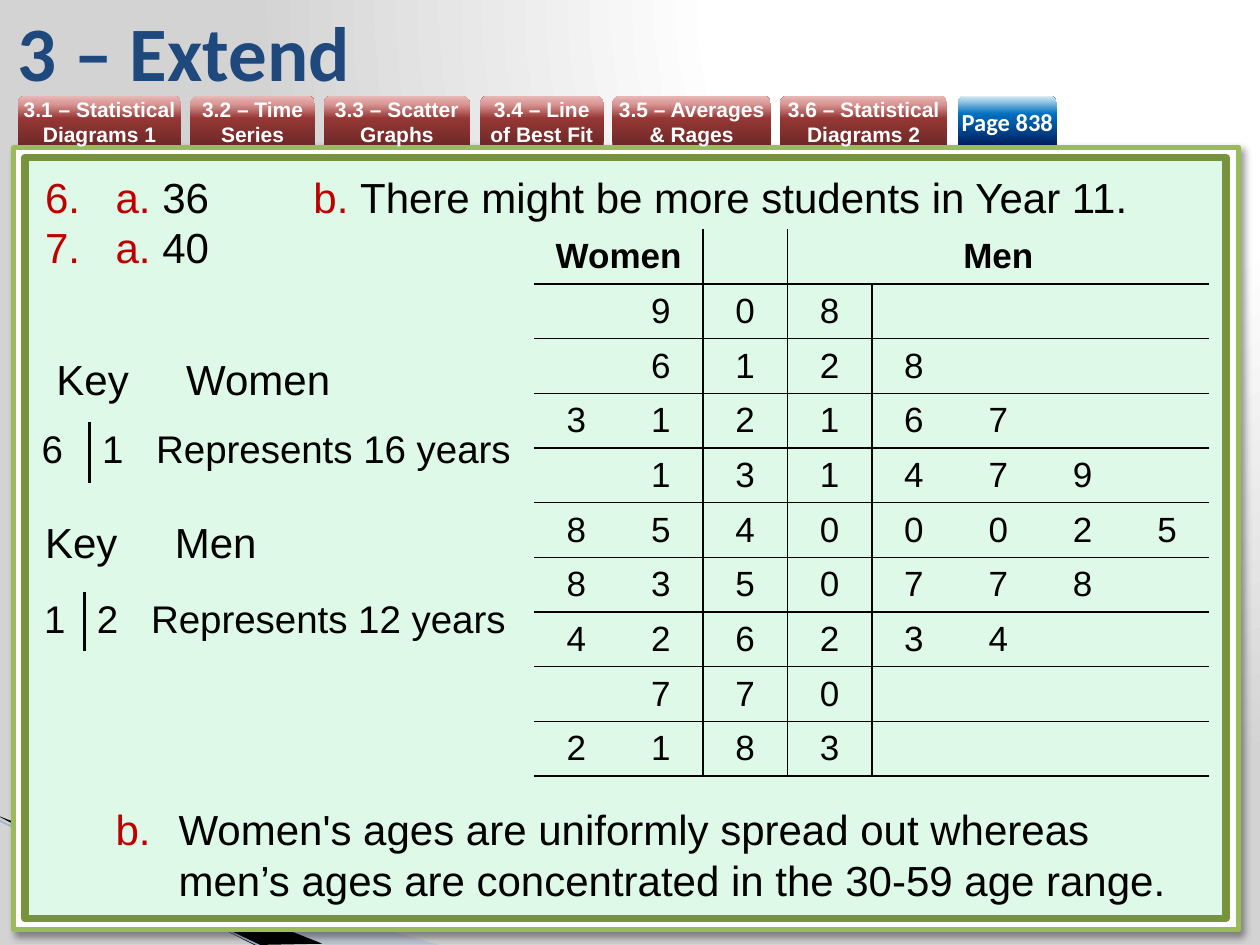
from lxml import etree
from pptx import Presentation
from pptx import util as u
from pptx.dml.color import RGBColor
from pptx.enum import shapes, text
from pptx.oxml import parse_xml
from pptx.oxml.ns import nsdecls, qn

INK = {
    "black": "000000", "white": "FFFFFF", "title": "1F497D", "red": "C00000",
    "mint": "DFF9E8", "olive": "77933C", "lime": "9BBB59",
    "haze": "A7B9DB", "steel": "9EB3D6", "grey": "D3D3D3",
}
WINE = [(0, "6F2927"), (54, "953735"), (83, "D99694"), (100, "E6B9B8")]
BLUE = [(0, "002060"), (63, "0070C0"), (100, "DBEEF4")]
UP = '<a:lin ang="16200000" scaled="0"/>'
GLOW = '<a:path path="circle"><a:fillToRect l="65000" t="0" r="0" b="98000"/></a:path>'
PLAIN = "{2D5ABB26-0587-4C30-8999-92F81FD0307C}"

TABS = [
    ("3.1 – Statistical Diagrams 1", 0.14, 1.3), ("3.2 – Time Series", 1.51, 0.99),
    ("3.3 – Scatter Graphs", 2.57, 1.16), ("3.4 – Line of Best Fit", 3.81, 0.98),
    ("3.5 – Averages & Rages", 4.86, 1.26), ("3.6 – Statistical Diagrams 2", 6.19, 1.33),
]
# Women's leaves, stem, men's leaves
STEMS = [
    (" 9", "0", "8"), (" 6", "1", "28"), ("31", "2", "167"),
    (" 1", "3", "1479"), ("85", "4", "00025"), ("83", "5", "0778"),
    ("42", "6", "234"), (" 7", "7", "0"), ("21", "8", "3"),
]


def rgb(name):
    return RGBColor.from_string(INK[name])


def box(*nums):
    return [u.Inches(n) for n in nums]


def write(para, *runs, size=24, font="Arial", color="black", bold=False, align="LEFT"):
    """Add runs to a paragraph; a run is a string or a (string, colour) pair."""
    para.alignment = getattr(text.PP_ALIGN, align)
    for item in runs:
        words, tint = item if isinstance(item, tuple) else (item, color)
        run = para.add_run()
        run.text = words
        run.font.size, run.font.name, run.font.bold = u.Pt(size), font, bold
        run.font.color.rgb = rgb(tint)


def add_tabs(para, *stops):
    tabs = etree.SubElement(para._p.get_or_add_pPr(), qn("a:tabLst"))
    for stop in stops:
        etree.SubElement(tabs, qn("a:tab"), pos=str(u.Inches(stop)), algn="l")


def number(para, kind, start, left, hang):
    props = para._p.get_or_add_pPr()
    props.set("marL", str(u.Inches(left)))
    props.set("indent", str(-u.Inches(hang)))
    tint = etree.SubElement(props, qn("a:buClr"))
    etree.SubElement(tint, qn("a:srgbClr"), val=INK["red"])
    etree.SubElement(props, qn("a:buFont"), typeface="+mj-lt")
    etree.SubElement(props, qn("a:buAutoNum"), type=kind, startAt=str(start))


def blend(fill, node, stops, shade):
    """Swap the fill held by node for a gradient."""
    fill.solid()
    marks = "".join(f'<a:gs pos="{pos * 1000}"><a:srgbClr val="{hue}"/></a:gs>'
                    for pos, hue in stops)
    grad = parse_xml(f'<a:gradFill {nsdecls("a")} rotWithShape="1">'
                     f'<a:gsLst>{marks}</a:gsLst>{shade}</a:gradFill>')
    old = node.find(qn("a:solidFill"))
    node.replace(old, grad)


def add_panel(slide, place, fill, line, width):
    panel = slide.shapes.add_shape(shapes.MSO_SHAPE.RECTANGLE, *box(*place))
    panel.shadow.inherit = False
    panel.fill.solid()
    panel.fill.fore_color.rgb = rgb(fill)
    panel.line.color.rgb = rgb(line)
    panel.line.width = u.Pt(width)
    return panel


def add_shade(panel):
    effects = panel._element.spPr.find(qn("a:effectLst"))
    effects.append(parse_xml(
        f'<a:outerShdw {nsdecls("a")} blurRad="{u.Pt(4)}" dist="{u.Pt(3)}" dir="2700000" '
        f'algn="tl" rotWithShape="0"><a:srgbClr val="{INK["black"]}">'
        '<a:alpha val="40000"/></a:srgbClr></a:outerShdw>'))


def add_button(slide, words, left, width, stops, **style):
    tab = slide.shapes.add_shape(shapes.MSO_SHAPE.ROUND_2_SAME_RECTANGLE,
                                 *box(left, 0.76, width, 0.39))
    tab.shadow.inherit = False
    tab.line.fill.background()
    blend(tab.fill, tab._element.spPr, stops, UP)
    frame = tab.text_frame
    frame.margin_left = frame.margin_right = frame.margin_top = frame.margin_bottom = 0
    frame.vertical_anchor = text.MSO_ANCHOR.MIDDLE
    frame.word_wrap = True
    write(frame.paragraphs[0], words, color="white", bold=True, align="CENTER", **style)


def add_wedge(slide, points, color, alpha=100):
    first, *rest = [box(*point) for point in points]
    pen = slide.shapes.build_freeform(*first)
    pen.add_line_segments(rest, close=True)
    wedge = pen.convert_to_shape()
    wedge.shadow.inherit = False
    wedge.line.fill.background()
    wedge.fill.solid()
    wedge.fill.fore_color.rgb = rgb(color)
    hue = wedge._element.spPr.find(qn("a:solidFill"))[0]
    etree.SubElement(hue, qn("a:alpha"), val=str(alpha * 1000))


def add_swoosh(slide):
    add_wedge(slide, [(-0.01, 6.5), (3.49, 7.5), (2.59, 7.5), (-0.01, 6.49)], "haze", 40)
    add_wedge(slide, [(0, 6.48), (2.56, 7.49), (2.02, 7.5), (0.01, 6.49)], "black")
    edge = slide.shapes.add_connector(shapes.MSO_CONNECTOR.STRAIGHT,
                                      *box(-0.01, 6.51, 2.09, 7.52))
    edge.line.color.rgb = rgb("steel")
    edge.line.width = u.Pt(0.95)
    etree.SubElement(edge._element.spPr, qn("a:effectLst"))


def add_grid(slide, place, widths, rows):
    frame = slide.shapes.add_table(rows, len(widths), *box(*place))
    grid = frame.table
    grid.first_row = grid.horz_banding = False
    grid._tbl.tblPr.find(qn("a:tableStyleId")).text = PLAIN
    for col, width in zip(grid.columns, widths):
        col.width = u.Inches(width)
    for cell in grid.iter_cells():
        cell.fill.background()
    return grid


def rule(cell, sides, width):
    """Draw borders on the given sides, a string in the order LRTB."""
    props = cell._tc.get_or_add_tcPr()
    for spot, side in enumerate(sides):
        props.insert(spot, parse_xml(
            f'<a:ln{side} {nsdecls("a")} w="{u.Pt(width)}"><a:solidFill>'
            f'<a:srgbClr val="{INK["black"]}"/></a:solidFill></a:ln{side}>'))


def add_stems(slide):
    grid = add_grid(slide, (4.24, 1.82, 5.33, 4.33), [0.67] * 8, len(STEMS) + 1)
    for first, last, words in ((0, 1, "Women"), (3, 7, "Men")):
        grid.cell(0, first).merge(grid.cell(0, last))
        write(grid.cell(0, first).text_frame.paragraphs[0], words,
              size=20, bold=True, align="CENTER")
    for row, parts in enumerate(STEMS, 1):
        for col, digit in enumerate("".join(parts)):
            if digit != " ":
                write(grid.cell(row, col).text_frame.paragraphs[0], digit,
                      size=20, align="CENTER")
    for row in range(len(STEMS) + 1):
        for col in range(8):
            upright = {1: "R", 2: "LR", 3: "L"}.get(col, "")
            rule(grid.cell(row, col), upright + ("TB" if row else "B"), 1)
            grid.cell(row, col).vertical_anchor = text.MSO_ANCHOR.MIDDLE


def add_key(slide, who, spot, place, stem, leaf, years):
    label = slide.shapes.add_textbox(*box(*spot, 2.4, 0.5)).text_frame
    label.word_wrap = True
    add_tabs(label.paragraphs[0], 1.03)
    write(label.paragraphs[0], f"Key\t{who}")
    left, top, width, height = place
    grid = add_grid(slide, (left, top, width + 3.57, height), [width, 3.57], 1)
    write(grid.cell(0, 0).text_frame.paragraphs[0], stem, size=22, align="CENTER")
    note = grid.cell(0, 1).text_frame.paragraphs[0]
    add_tabs(note, 0.43)
    write(note, f"{leaf}\tRepresents {years} years", size=22)
    rule(grid.cell(0, 0), "R", 2.25)
    rule(grid.cell(0, 1), "L", 2.25)


def add_answers(slide):
    frame = slide.shapes.add_textbox(*box(0.26, 1.31, 9.37, 5.96)).text_frame
    frame.word_wrap = True
    six, seven, last = frame.paragraphs[0], frame.add_paragraph(), frame.add_paragraph()
    for para in (six, seven):
        number(para, "arabicPeriod", 6, 0.56, 0.56)
    add_tabs(six, 1.06, 2.13)
    write(six, ("a. ", "red"), "36\t", ("b. ", "red"),
          "There might be more students in Year 11.")
    write(seven, ("a.", "red"), " 40")
    number(last, "alphaLcPeriod", 2, 1.06, 0.5)
    last.space_before = u.Pt(304)
    write(last, "Women's ages are uniformly spread out whereas "
                "men’s ages are concentrated in the 30-59 age range.")


def main():
    deck = Presentation()
    deck.slide_width, deck.slide_height = box(10, 7.5)
    slide = deck.slides.add_slide(deck.slide_layouts[5])

    # Backdrop and frame
    back = slide.background.fill
    back.solid()
    blend(back, slide.element.find(".//" + qn("p:bgPr")),
          [(0, INK["white"]), (40, INK["white"]), (100, INK["grey"])], GLOW)
    add_swoosh(slide)
    add_shade(add_panel(slide, (0.11, 1.17, 9.72, 6.21), "white", "lime", 3))
    add_panel(slide, (0.2, 1.25, 9.53, 6.04), "mint", "olive", 4.33)

    # Title and section tabs
    title = slide.shapes.title
    title.left, title.top, title.width, title.height = box(0.04, 0.05, 8.43, 0.71)
    title.text_frame.vertical_anchor = text.MSO_ANCHOR.MIDDLE
    write(title.text_frame.paragraphs[0], "3 – Extend",
          size=44, font="Calibri", color="title", bold=True)
    for words, left, width in TABS:
        add_button(slide, words, left, width, WINE, size=12)
    add_button(slide, "Page 838", 7.6, 0.79, BLUE, size=14, font="Calibri")

    # Answers, stem-and-leaf table and keys
    add_answers(slide)
    add_stems(slide)
    add_key(slide, "Women", (0.35, 2.76), (0.12, 3.35, 0.59, 0.48), "6", "1", 16)
    add_key(slide, "Men", (0.26, 4.05), (0.2, 4.7, 0.47, 0.47), "1", "2", 12)
    deck.save("out.pptx")


if __name__ == "__main__":
    main()
